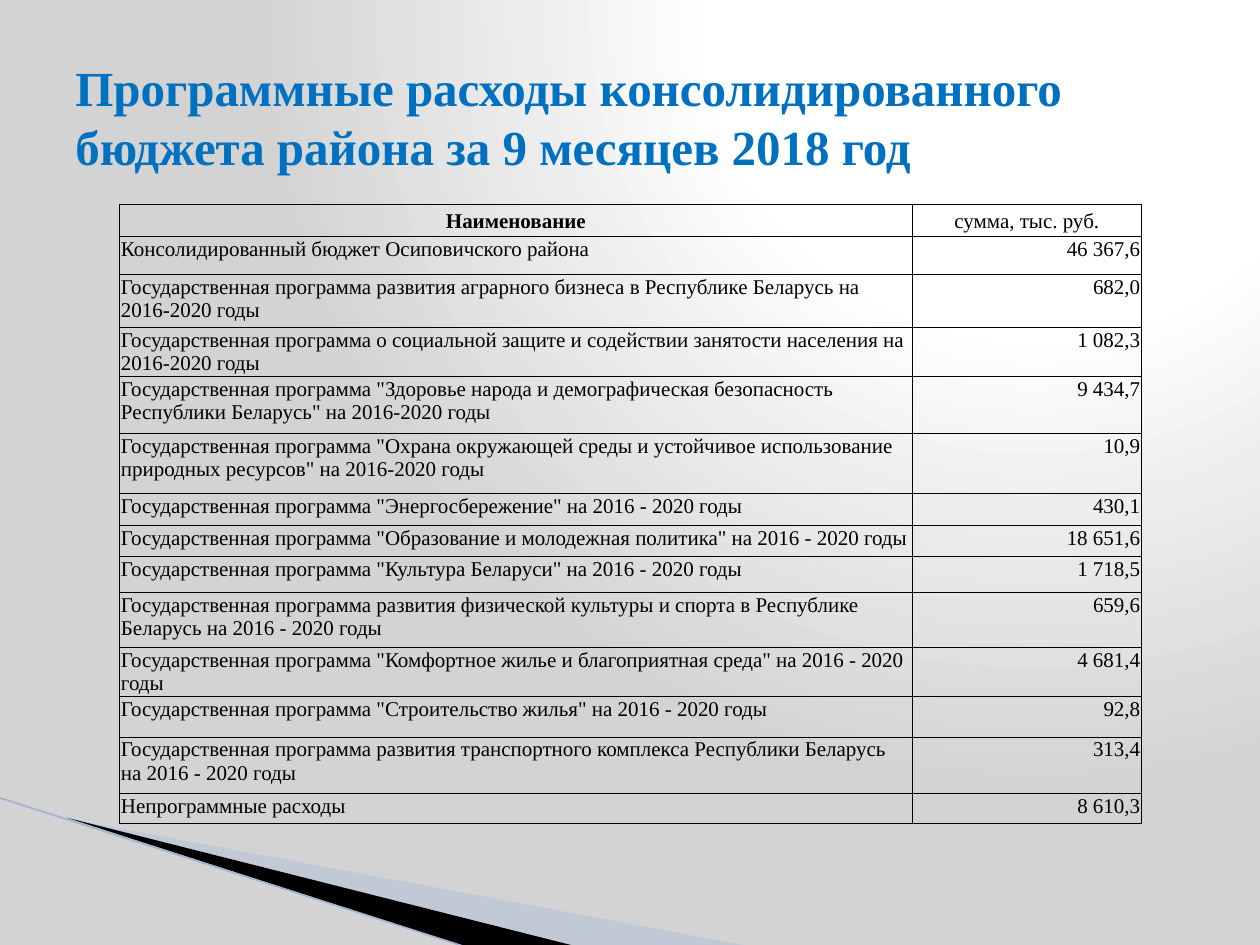
"""Build the slide on programme spending of the consolidated district budget."""
from typing import NamedTuple

from pptx import Presentation
from pptx import oxml
from pptx import util as u
from pptx.dml.color import RGBColor
from pptx.enum import shapes, text
from pptx.oxml import ns

FONT = "Times New Roman"
BLACK = RGBColor(0x00, 0x00, 0x00)
TITLE_BLUE = RGBColor(0x00, 0x70, 0xC0)
WEDGE_BLUE = RGBColor(0xA7, 0xB9, 0xDB)
LINE_BLUE = RGBColor(0x9E, 0xB3, 0xD6)
WHITE = RGBColor(0xFF, 0xFF, 0xFF)
GREY = RGBColor(0xD3, 0xD3, 0xD3)
GRADIENT_STOPS = ((0, WHITE), (40, WHITE), (100, GREY))
COLUMN_WIDTHS = (6.29, 1.82)
TITLE = "Программные расходы консолидированного бюджета района за 9 месяцев 2018 год"


class Wedge(NamedTuple):
    points: tuple
    color: RGBColor
    opacity: int


class BudgetRow(NamedTuple):
    name: str
    amount: str
    height: float


WEDGES = (
    Wedge(((0.55, 6.5), (5.95, 7.51), (4.56, 7.51)), WEDGE_BLUE, 40),
    Wedge(((0.53, 6.49), (4.57, 7.51), (3.72, 7.52)), BLACK, 100),
)

BUDGET_ROWS = (
    BudgetRow("Наименование", "сумма, тыс. руб.", 0.26),
    BudgetRow("Консолидированный бюджет Осиповичского района", "46 367,6", 0.3),
    BudgetRow("Государственная программа развития аграрного бизнеса в Республике Беларусь "
              "на 2016-2020 годы", "682,0", 0.42),
    BudgetRow("Государственная программа о социальной защите и содействии занятости населения "
              "на 2016-2020 годы", "1 082,3", 0.39),
    BudgetRow('Государственная программа "Здоровье народа и демографическая безопасность '
              'Республики Беларусь" на 2016-2020 годы', "9 434,7", 0.45),
    BudgetRow('Государственная программа "Охрана окружающей среды и устойчивое использование '
              'природных ресурсов" на 2016-2020 годы', "10,9", 0.48),
    BudgetRow('Государственная программа "Энергосбережение" на 2016 - 2020 годы', "430,1", 0.25),
    BudgetRow('Государственная программа "Образование и молодежная политика" '
              'на 2016 - 2020 годы', "18 651,6", 0.25),
    BudgetRow('Государственная программа "Культура Беларуси" на 2016 - 2020 годы',
              "1 718,5", 0.28),
    BudgetRow("Государственная программа развития физической культуры и спорта "
              "в Республике Беларусь на 2016 - 2020 годы", "659,6", 0.44),
    BudgetRow('Государственная программа "Комфортное жилье и благоприятная среда" '
              'на 2016 - 2020 годы', "4 681,4", 0.39),
    BudgetRow('Государственная программа "Строительство жилья" на 2016 - 2020 годы',
              "92,8", 0.32),
    BudgetRow("Государственная программа развития транспортного комплекса "
              "Республики Беларусь на 2016 - 2020 годы", "313,4", 0.45),
    BudgetRow("Непрограммные расходы", "8 610,3", 0.24),
)


def set_background(slide) -> None:
    fill = slide.background.fill
    fill.gradient()
    properties = slide.background._cSld.bg.bgPr
    stops = "".join(
        f'<a:gs pos="{position * 1000}"><a:srgbClr val="{color}"/></a:gs>'
        for position, color in GRADIENT_STOPS
    )
    gradient = oxml.parse_xml(
        f'<a:gradFill {ns.nsdecls("a")} rotWithShape="1"><a:gsLst>{stops}</a:gsLst>'
        '<a:path path="circle"><a:fillToRect l="65000" t="0" r="0" b="98000"/></a:path>'
        "</a:gradFill>"
    )
    properties.replace(properties.find(ns.qn("a:gradFill")), gradient)


def add_wedge(slide, wedge: Wedge) -> None:
    points = [(u.Inches(x), u.Inches(y)) for x, y in wedge.points]
    builder = slide.shapes.build_freeform(*points[0])
    builder.add_line_segments(points[1:], close=True)
    shape = builder.convert_to_shape()
    shape.shadow.inherit = False
    shape.fill.solid()
    shape.fill.fore_color.rgb = wedge.color
    shape.line.fill.background()
    if wedge.opacity < 100:
        color = shape._element.spPr.find(f'.//{ns.qn("a:srgbClr")}')
        color.append(oxml.parse_xml(
            f'<a:alpha {ns.nsdecls("a")} val="{wedge.opacity * 1000}"/>'))


def add_edge_line(slide) -> None:
    line = slide.shapes.add_connector(
        shapes.MSO_CONNECTOR.STRAIGHT,
        u.Inches(-0.01), u.Inches(6.33), u.Inches(3.71), u.Inches(7.52))
    line.line.color.rgb = LINE_BLUE
    line.line.width = u.Pt(0.95)
    line._element.spPr.append(oxml.parse_xml(f'<a:effectLst {ns.nsdecls("a")}/>'))


def add_run(paragraph, content: str, size: float, color: RGBColor, bold: bool) -> None:
    run = paragraph.add_run()
    run.text = content
    run.font.name = FONT
    run.font.size = u.Pt(size)
    run.font.color.rgb = color
    run.font.bold = bold


def fill_cell(cell, content: str, alignment, bold: bool, anchor) -> None:
    cell.margin_left = cell.margin_right = cell.margin_top = u.Inches(0.01)
    cell.margin_bottom = 0
    cell.vertical_anchor = anchor
    cell.fill.background()
    properties = cell._tc.get_or_add_tcPr()
    for index, side in enumerate(("lnL", "lnR", "lnT", "lnB")):
        properties.insert(index, oxml.parse_xml(
            f'<a:{side} {ns.nsdecls("a")} w="{u.Pt(0.5)}"><a:solidFill>'
            f'<a:srgbClr val="{BLACK}"/></a:solidFill></a:{side}>'))
    paragraph = cell.text_frame.paragraphs[0]
    paragraph.alignment = alignment
    add_run(paragraph, content, 12, BLACK, bold)


def add_budget_table(slide) -> None:
    table = slide.shapes.add_table(
        len(BUDGET_ROWS), len(COLUMN_WIDTHS), u.Inches(0.95), u.Inches(1.62),
        u.Inches(sum(COLUMN_WIDTHS)),
        u.Inches(sum(row.height for row in BUDGET_ROWS))).table
    table.horz_banding = False
    for column, width in zip(table.columns, COLUMN_WIDTHS):
        column.width = u.Inches(width)
    for index, row in enumerate(BUDGET_ROWS):
        header = index == 0
        table.rows[index].height = u.Inches(row.height)
        anchor = text.MSO_ANCHOR.MIDDLE if header else text.MSO_ANCHOR.TOP
        name_alignment = text.PP_ALIGN.CENTER if header else text.PP_ALIGN.LEFT
        amount_alignment = text.PP_ALIGN.CENTER if header else text.PP_ALIGN.RIGHT
        fill_cell(table.cell(index, 0), row.name, name_alignment, header, anchor)
        fill_cell(table.cell(index, 1), row.amount, amount_alignment, False, anchor)


def add_title(slide) -> None:
    frame = slide.shapes.add_textbox(
        u.Inches(0.5), u.Inches(0.3), u.Inches(9), u.Inches(1.25)).text_frame
    frame.word_wrap = True
    frame.vertical_anchor = text.MSO_ANCHOR.MIDDLE
    add_run(frame.paragraphs[0], TITLE, 28, TITLE_BLUE, True)


def main() -> None:
    presentation = Presentation()
    presentation.slide_width = u.Inches(10)
    presentation.slide_height = u.Inches(7.5)
    slide = presentation.slides.add_slide(presentation.slide_layouts[6])
    set_background(slide)
    for wedge in WEDGES:
        add_wedge(slide, wedge)
    add_edge_line(slide)
    add_budget_table(slide)
    add_title(slide)
    presentation.save("out.pptx")


if __name__ == "__main__":
    main()
